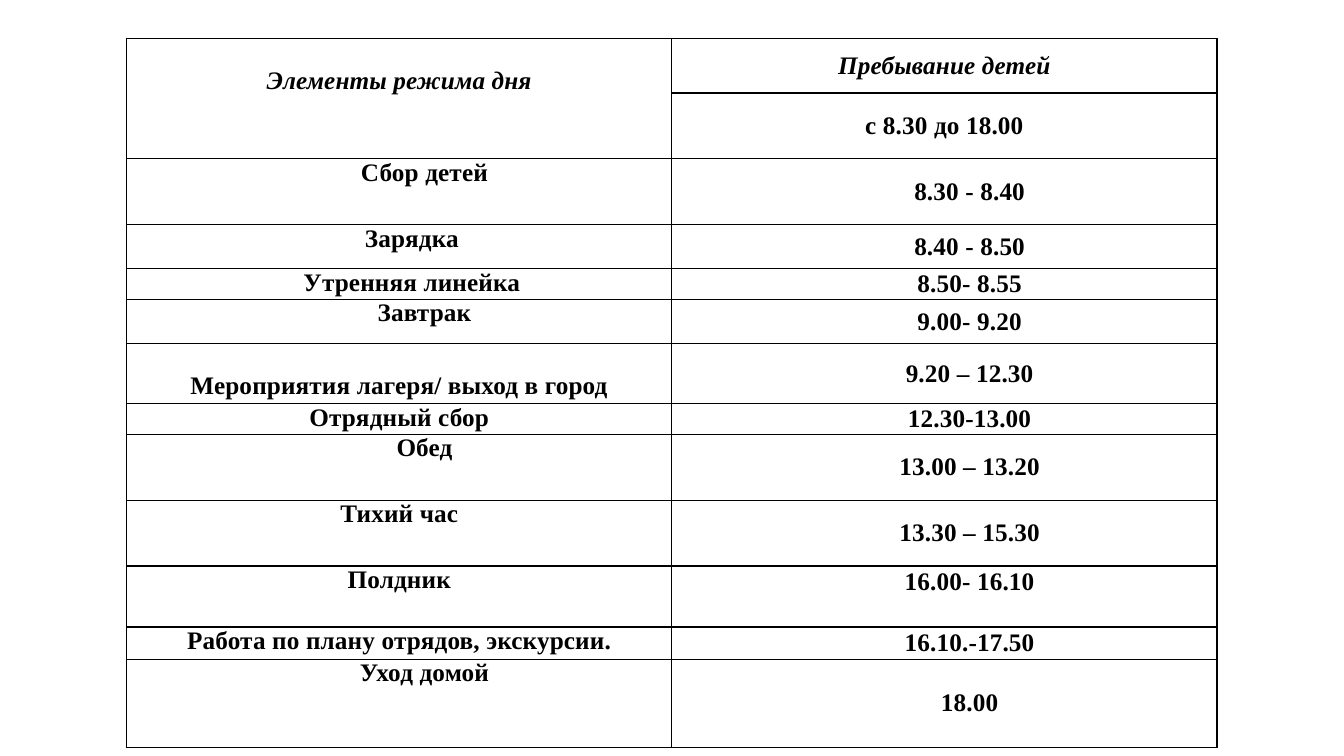
from dataclasses import dataclass

import lxml.etree
import pptx
import pptx.dml.color
import pptx.enum.text
import pptx.oxml.ns
import pptx.table
import pptx.util

Pt = pptx.util.Pt
qn = pptx.oxml.ns.qn
ANCHOR = pptx.enum.text.MSO_ANCHOR


@dataclass(frozen=True)
class Theme:
    font: str = "Times New Roman"
    size: float = 18
    tracking: float = 0.1
    ink: str = "000000"
    border: float = 1
    side_inset: float = 3.6
    line: float = 20.7


@dataclass(frozen=True)
class Entry:
    """Text of one cell; indent shifts its first line, top and bottom are insets."""
    text: str
    indent: float = 36
    top: float = 0
    bottom: float = 0
    italic: bool = False


@dataclass(frozen=True)
class Row:
    height: float
    activity: Entry | None
    hours: Entry


THEME = Theme()
LEFT, TOP, COLUMN_WIDTH = 90.5, 27.4, 389.4

ROWS = [
    Row(39, Entry("Элементы режима дня", 0, top=THEME.line, italic=True),
        Entry("Пребывание детей", 0, italic=True)),
    Row(47, None, Entry("с 8.30 до 18.00", 0, bottom=0)),
    Row(47, Entry("Сбор детей"), Entry("8.30 - 8.40")),
    Row(31.5, Entry("Зарядка", 18), Entry("8.40 - 8.50")),
    Row(22, Entry("Утренняя линейка", 18), Entry("8.50- 8.55")),
    Row(31.5, Entry("Завтрак"), Entry("9.00- 9.20")),
    Row(43, Entry("Мероприятия лагеря/ выход в город", 0, top=THEME.line),
        Entry("9.20 – 12.30")),
    Row(22, Entry("Отрядный сбор", 0), Entry("12.30-13.00")),
    Row(47, Entry("Обед"), Entry("13.00 – 13.20")),
    Row(47, Entry("Тихий час", 0), Entry("13.30 – 15.30")),
    Row(43.5, Entry("Полдник", 0), Entry("16.00- 16.10", bottom=THEME.line)),
    Row(23, Entry("Работа по плану отрядов, экскурсии.", 0), Entry("16.10.-17.50")),
    Row(63, Entry("Уход домой"), Entry("18.00")),
]


def style_cell(cell: pptx.table._Cell) -> None:
    """Clear the fill and draw a border on all four sides."""
    cell.fill.background()
    tc_pr = cell._tc.get_or_add_tcPr()
    for i, side in enumerate(("lnL", "lnR", "lnT", "lnB")):
        ln = lxml.etree.Element(qn(f"a:{side}"), w=str(Pt(THEME.border)))
        fill = lxml.etree.SubElement(ln, qn("a:solidFill"))
        lxml.etree.SubElement(fill, qn("a:srgbClr"), val=THEME.ink)
        tc_pr.insert(i, ln)


def write_entry(cell: pptx.table._Cell, entry: Entry, anchor: ANCHOR) -> None:
    cell.vertical_anchor = anchor
    cell.margin_left = cell.margin_right = Pt(THEME.side_inset)
    cell.margin_top, cell.margin_bottom = Pt(entry.top), Pt(entry.bottom)
    p = cell.text_frame.paragraphs[0]
    p.text = entry.text
    p.alignment = pptx.enum.text.PP_ALIGN.CENTER
    p_pr = p._p.get_or_add_pPr()
    p_pr.set("marL", "0")
    p_pr.set("indent", str(Pt(entry.indent)))
    font = p.font
    font.name, font.size = THEME.font, Pt(THEME.size)
    font.bold, font.italic = True, entry.italic
    font.color.rgb = pptx.dml.color.RGBColor.from_string(THEME.ink)
    p_pr.find(qn("a:defRPr")).set("spc", str(round(THEME.tracking * 100)))


def add_schedule(s: pptx.slide.Slide) -> None:
    height = sum(row.height for row in ROWS)
    frame = s.shapes.add_table(len(ROWS), 2, Pt(LEFT), Pt(TOP),
                               Pt(2 * COLUMN_WIDTH), Pt(height))
    table = frame.table
    table.first_row = table.horz_banding = False
    for column in table.columns:
        column.width = Pt(COLUMN_WIDTH)
    for cell in table.iter_cells():
        style_cell(cell)
    table.cell(0, 0).merge(table.cell(1, 0))
    for i, row in enumerate(ROWS):
        table.rows[i].height = Pt(row.height)
        if row.activity:
            write_entry(table.cell(i, 0), row.activity, ANCHOR.TOP)
        write_entry(table.cell(i, 1), row.hours, ANCHOR.MIDDLE)


def main() -> None:
    prs = pptx.Presentation()
    prs.slide_width, prs.slide_height = Pt(960), Pt(540)
    s = prs.slides.add_slide(prs.slide_layouts[6])
    add_schedule(s)
    prs.save("out.pptx")


if __name__ == "__main__":
    main()
